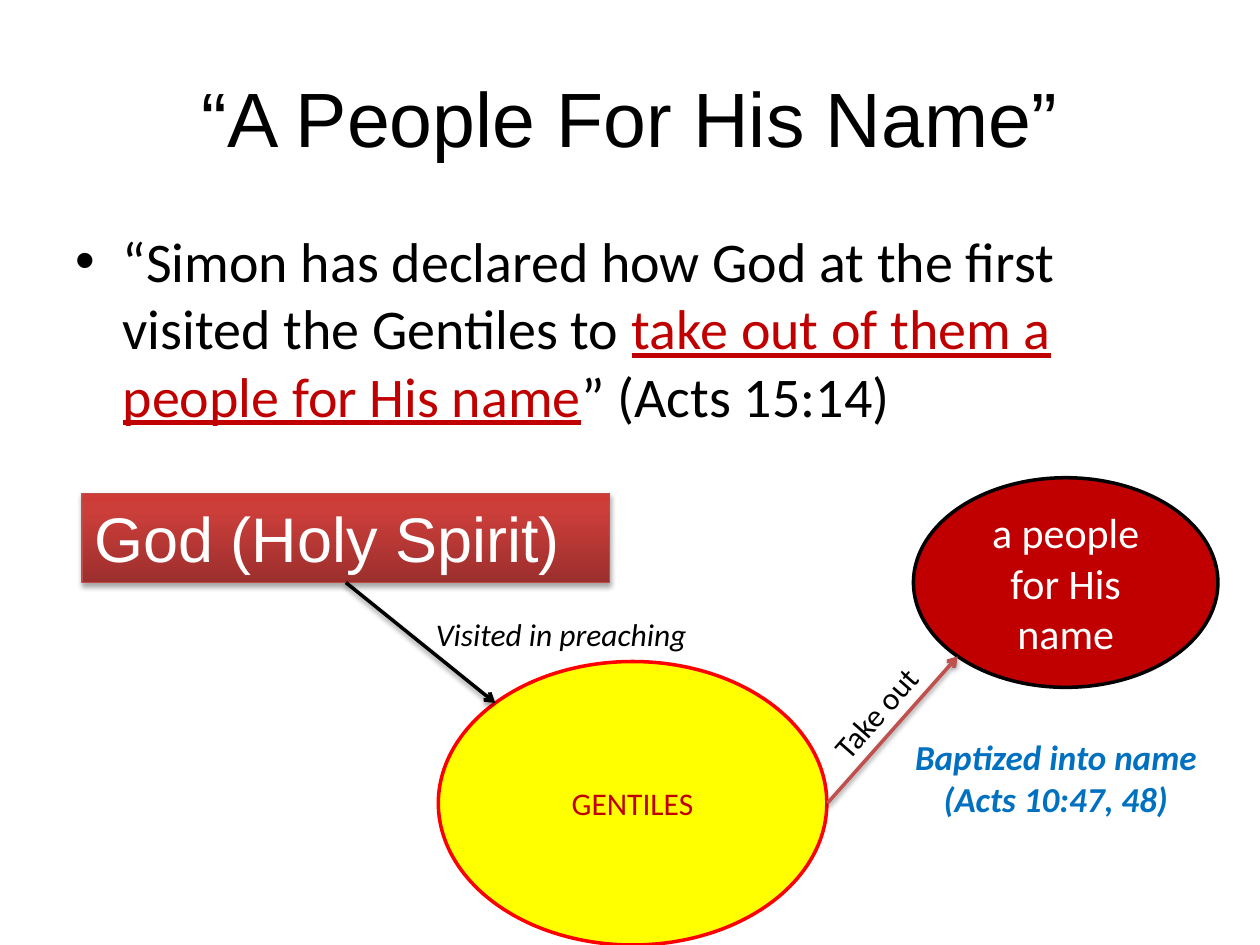
from copy import deepcopy
from dataclasses import dataclass, field
from typing import Optional

from lxml.etree import SubElement as Sub
from pptx import Presentation
from pptx.dml.color import RGBColor as Rgb
from pptx.enum.shapes import MSO_CONNECTOR as Link, MSO_SHAPE as Form
from pptx.enum.text import MSO_ANCHOR as Anchor, MSO_AUTO_SIZE as Fit, PP_ALIGN as Align
from pptx.oxml.ns import qn
from pptx.util import Pt


# Colours and type sizes
@dataclass(frozen=True)
class Theme:
    black: str = "000000"
    white: str = "FFFFFF"
    red: str = "C00000"
    edge: str = "FF0000"
    yellow: str = "FFFF00"
    blue: str = "0070C0"
    rose: str = "C0504D"
    trim: str = "BF4C48"
    ramp: tuple = ((0, "9C2F2D"), (0.8, "CB3E3A"), (1, "CE3B37"))
    head: int = 44
    lead: int = 36
    body: int = 32
    mid: int = 24
    note: int = 20
    small: int = 18
    sans: str = "Calibri"
    plain: str = "Arial"


T = Theme()


@dataclass
class Run:
    text: str
    size: float
    color: str = T.black
    font: str = T.sans
    style: dict = field(default_factory=dict)


@dataclass
class Label:
    box: tuple
    runs: list
    align: Align = Align.LEFT
    anchor: Anchor = Anchor.TOP
    wrap: bool = True
    grow: bool = False
    turn: float = 0


@dataclass
class Oval:
    box: tuple
    fill: str
    line: str
    run: Run


@dataclass
class Arrow:
    start: tuple
    end: tuple
    color: str
    source: Optional[object] = None


def write(shape, label: Label) -> None:
    frame = shape.text_frame
    form = {"word_wrap": label.wrap, "vertical_anchor": label.anchor,
            "auto_size": Fit.SHAPE_TO_FIT_TEXT if label.grow else Fit.NONE}
    for key, value in form.items():
        setattr(frame, key, value)
    para = frame.paragraphs[0]
    para.alignment = label.align
    for item in label.runs:
        run = para.add_run()
        run.text = item.text
        look = {"name": item.font, "size": Pt(item.size), **item.style}
        for key, value in look.items():
            setattr(run.font, key, value)
        run.font.color.rgb = Rgb.from_string(item.color)


def draw_text(slide, label: Label):
    shape = slide.shapes.add_textbox(*map(Pt, label.box))
    write(shape, label)
    shape.rotation = label.turn
    return shape


def outline(shape, color: str, width: float) -> None:
    shape.line.color.rgb = Rgb.from_string(color)
    shape.line.width = Pt(width)


def shade(shape, gap: float, alpha: int) -> None:
    effects = Sub(shape._element.spPr, qn("a:effectLst"))
    cast = Sub(effects, qn("a:outerShdw"), blurRad=str(Pt(3.1)), dist=str(Pt(gap)),
               dir="5400000", rotWithShape="0")
    tint = Sub(cast, qn("a:srgbClr"), val=T.black)
    Sub(tint, qn("a:alpha"), val=str(alpha * 1000))


def draw_oval(slide, oval: Oval) -> None:
    shape = slide.shapes.add_shape(Form.OVAL, *map(Pt, oval.box))
    shape.shadow.inherit = False
    shape.fill.solid()
    shape.fill.fore_color.rgb = Rgb.from_string(oval.fill)
    outline(shape, oval.line, 2)
    write(shape, Label(oval.box, [oval.run], Align.CENTER, Anchor.MIDDLE))


def draw_banner(slide, label: Label):
    shape = slide.shapes.add_shape(Form.RECTANGLE, *map(Pt, label.box))
    shape.fill.gradient()
    shape.fill.gradient_angle = 90
    stops = shape._element.spPr.find(qn("a:gradFill")).find(qn("a:gsLst"))
    stops.append(deepcopy(stops[-1]))
    for stop, (place, color) in zip(shape.fill.gradient_stops, T.ramp):
        stop.position = place
        stop.color.rgb = Rgb.from_string(color)
    outline(shape, T.trim, 0.75)
    shade(shape, 1.8, 35)
    write(shape, label)
    return shape


def draw_arrow(slide, arrow: Arrow) -> None:
    line = slide.shapes.add_connector(Link.STRAIGHT, *map(Pt, arrow.start + arrow.end))
    if arrow.source is not None:
        line.begin_connect(arrow.source, 2)
    outline(line, arrow.color, 2)
    Sub(line.line._get_or_add_ln(), qn("a:tailEnd"), type="arrow")
    shade(line, 1.6, 38)


def add_bullet(shape) -> None:
    para = shape.text_frame.paragraphs[0]
    para.space_before = Pt(6.4)
    props = para._p.get_or_add_pPr()
    props.set("marL", str(Pt(27)))
    props.set("indent", str(Pt(-27)))
    Sub(props, qn("a:buFont"), typeface=T.plain)
    Sub(props, qn("a:buChar"), char="•")


def main() -> None:
    deck = Presentation()
    deck.slide_width, deck.slide_height = Pt(720), Pt(540)
    slide = deck.slides.add_slide(deck.slide_layouts[6])

    # Title and verse
    draw_text(slide, Label((36, 21.6, 648, 90),
                           [Run("“A People For His Name”", T.head, font=T.plain)],
                           Align.CENTER, Anchor.MIDDLE))
    verse = draw_text(slide, Label((36, 126, 648, 162), [
        Run("“Simon has declared how God at the first visited the Gentiles to ", T.body),
        Run("take out of them a people for His name", T.body, T.red,
            style={"underline": True}),
        Run("” (Acts 15:14)", T.body)]))
    add_bullet(verse)

    # Diagram, from back to front
    draw_oval(slide, Oval((250.5, 378, 222, 162), T.yellow, T.edge,
                          Run("GENTILES", T.small, T.red)))
    banner = draw_banner(slide, Label(
        (46.8, 282, 301.7, 50.9),
        [Run("God (Holy Spirit)", T.lead, T.white, T.plain)], wrap=False, grow=True))
    draw_arrow(slide, Arrow((197.7, 332.9), (283, 401.7), T.black, banner))
    draw_oval(slide, Oval((522, 273, 174, 119.8), T.red, T.black,
                          Run("a people for His name", T.mid, T.white)))
    draw_arrow(slide, Arrow((472.8, 459), (547.3, 375.1), T.rose))

    # Captions
    captions = [
        Label((242, 348, 160, 29.1),
              [Run("Visited in preaching", T.small, style={"italic": True})],
              wrap=False, grow=True),
        Label((510.5, 417, 185.8, 55.7),
              [Run("Baptized into name (Acts 10:47, 48)", T.note, T.blue,
                   style={"bold": True, "italic": True})],
              Align.CENTER, grow=True),
        Label((462.2, 392.4, 77, 29.1), [Run("Take out", T.small)],
              wrap=False, grow=True, turn=311.3),
    ]
    for caption in captions:
        draw_text(slide, caption)

    deck.save("out.pptx")


if __name__ == "__main__":
    main()
